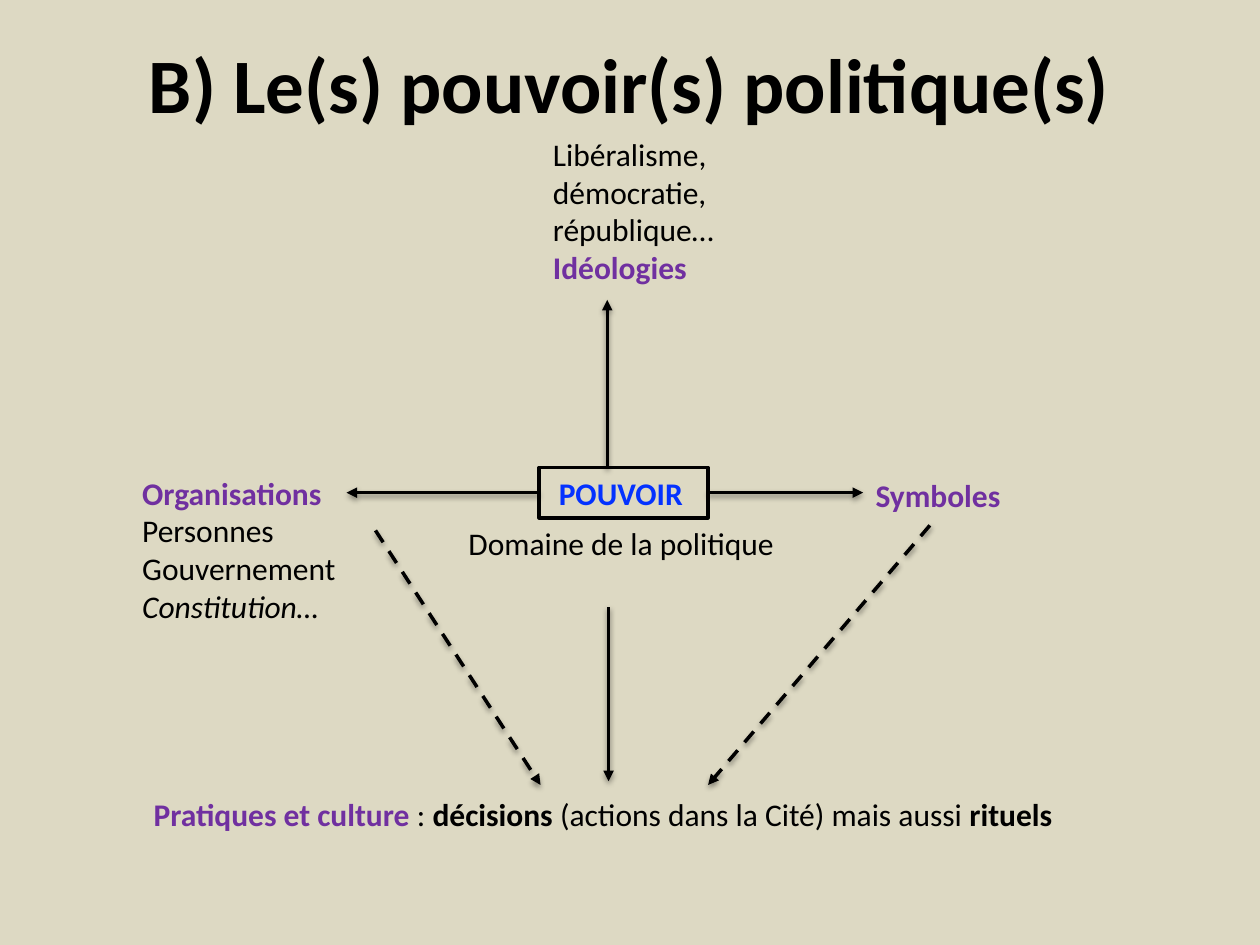
from lxml import etree
from pptx import Presentation
from pptx.dml.color import RGBColor
from pptx.enum import dml, shapes, text
from pptx.oxml import ns
from pptx.util import Inches, Pt

FONT = "Calibri"
BLACK, PURPLE, BLUE, SAND = "000000", "7030A0", "0432FF", "DDD9C3"

# Content: each paragraph is a list of (text, colour, style); b = bold, i = italic
TITLE = [[("B) Le(s) pouvoir(s) politique(s)", BLACK, "b")]]
POWER = [[(" ", BLACK, "b"), ("POUVOIR", BLUE, "b")]]
LABELS = [  # left, top, width, height, paragraphs
    (3.62, 4.11, 2.7, 0.4, [[("Domaine de la politique", BLACK, "")]]),
    (6.85, 3.73, 2.21, 0.4, [[("Symboles", PURPLE, "b")]]),
    (1.03, 3.71, 2.21, 1.31, [
        [("Organisations", PURPLE, "b")],
        [("Personnes", BLACK, "")],
        [("Gouvernement", BLACK, "")],
        [("Constitution…", BLACK, "i")],
    ]),
    (4.29, 1.02, 2.21, 1.62, [
        [("Libéralisme, démocratie, république…", BLACK, "")],
        [("Idéologies", PURPLE, "b")],
    ]),
    (1.12, 6.26, 7.39, 0.4, [[
        ("Pratiques et culture", PURPLE, "b"),
        (" : ", BLACK, ""),
        ("décisions", BLACK, "b"),
        (" (actions dans la Cité) mais aussi ", BLACK, ""),
        ("rituels", BLACK, "b"),
    ]]),
]
ARROWS = [  # start, end, dashed, side of the central box it leaves from
    ((4.82, 3.71), (4.82, 2.38), False, None),
    ((5.62, 3.91), (6.85, 3.91), False, 3),
    ((4.28, 3.91), (2.75, 3.91), False, 1),
    ((4.83, 4.82), (4.83, 6.2), False, None),
    ((7.38, 4.17), (5.62, 6.23), True, None),
    ((2.98, 4.21), (4.29, 6.23), True, None),
]


def color(value):
    return RGBColor.from_string(value)


def write(box, paragraphs, size=18, align=text.PP_ALIGN.LEFT,
          anchor=text.MSO_ANCHOR.TOP):
    frame = box.text_frame
    frame.word_wrap = True
    frame.vertical_anchor = anchor
    for index, spans in enumerate(paragraphs):
        para = frame.add_paragraph() if index else frame.paragraphs[0]
        para.alignment = align
        for words, fill, style in spans:
            span = para.add_run()
            span.text = words
            span.font.name = FONT
            span.font.size = Pt(size)
            span.font.bold = "b" in style
            span.font.italic = "i" in style
            span.font.color.rgb = color(fill)


def add_text(slide, left, top, width, height, paragraphs, **options):
    box = slide.shapes.add_textbox(*map(Inches, (left, top, width, height)))
    write(box, paragraphs, **options)


def add_arrow(slide, start, end, dashed, side, source):
    arrow = slide.shapes.add_connector(
        shapes.MSO_CONNECTOR.STRAIGHT, *map(Inches, start + end))
    if side is not None:
        arrow.begin_connect(source, side)
    arrow.line.color.rgb = color(BLACK)
    arrow.line.width = Pt(2)
    if dashed:
        arrow.line.dash_style = dml.MSO_LINE.DASH
    # Arrowhead and soft shadow below the line
    properties = arrow.line._get_or_add_ln()
    etree.SubElement(properties, ns.qn("a:tailEnd"), type="triangle")
    effects = etree.SubElement(arrow._element.spPr, ns.qn("a:effectLst"))
    shadow = etree.SubElement(
        effects, ns.qn("a:outerShdw"), blurRad=str(Pt(3.1)),
        dist=str(Pt(1.6)), dir="5400000", rotWithShape="0")
    tint = etree.SubElement(shadow, ns.qn("a:srgbClr"), val=BLACK)
    etree.SubElement(tint, ns.qn("a:alpha"), val="38000")


def main():
    deck = Presentation()
    deck.slide_width, deck.slide_height = Inches(10), Inches(7.5)
    slide = deck.slides.add_slide(deck.slide_layouts[6])
    slide.background.fill.solid()
    slide.background.fill.fore_color.rgb = color(SAND)

    add_text(slide, 0.5, 0.03, 9, 1.25, TITLE, size=44,
             align=text.PP_ALIGN.CENTER, anchor=text.MSO_ANCHOR.MIDDLE)

    # Central box
    power = slide.shapes.add_shape(
        shapes.MSO_SHAPE.RECTANGLE, *map(Inches, (4.28, 3.71, 1.34, 0.4)))
    power.shadow.inherit = False
    power.fill.background()
    power.line.color.rgb = color(BLACK)
    power.line.width = Pt(2)
    write(power, POWER)

    for label in LABELS:
        add_text(slide, *label)
    for arrow in ARROWS:
        add_arrow(slide, *arrow, power)

    deck.save("out.pptx")


if __name__ == "__main__":
    main()
